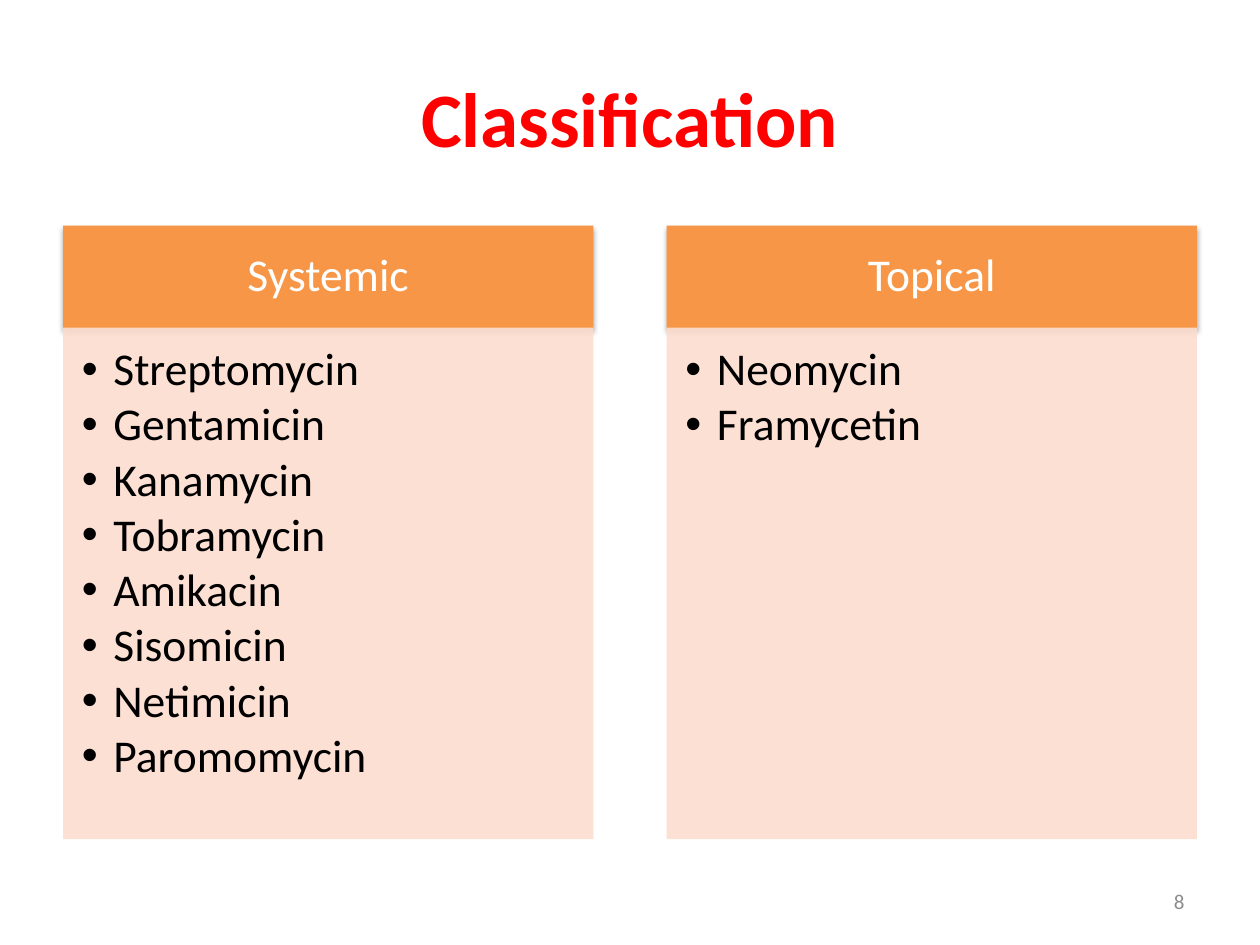
from lxml import etree
from pptx import Presentation
from pptx.dml.color import RGBColor
from pptx.enum.shapes import MSO_SHAPE
from pptx.enum.text import MSO_ANCHOR, PP_ALIGN
from pptx.oxml import parse_xml
from pptx.oxml.ns import nsdecls, qn
from pptx.util import Inches, Pt

# Content
TITLE = "Classification"
GROUPS = [
    ("Systemic", ["Streptomycin", "Gentamicin", "Kanamycin", "Tobramycin",
                  "Amikacin", "Sisomicin", "Netimicin", "Paromomycin"]),
    ("Topical", ["Neomycin", "Framycetin"]),
]
NUMBER = "8"

# Style
RED = RGBColor(0xFF, 0x00, 0x00)
ORANGE = RGBColor(0xF7, 0x96, 0x46)
PEACH = RGBColor(0xFC, 0xDD, 0xCF)
WHITE = RGBColor(0xFF, 0xFF, 0xFF)
BLACK = RGBColor(0x00, 0x00, 0x00)
GRAY = RGBColor(0x8C, 0x8C, 0x8C)
FONT = "Calibri"
RECT = MSO_SHAPE.RECTANGLE
MIDDLE, TOP = MSO_ANCHOR.MIDDLE, MSO_ANCHOR.TOP
LEFT, CENTER, RIGHT = PP_ALIGN.LEFT, PP_ALIGN.CENTER, PP_ALIGN.RIGHT

# Grid, in inches
WIDE, HIGH = 10, 7.5
EDGE, GAP = 0.5, 0.58
COL = (WIDE - 2 * EDGE - GAP * (len(GROUPS) - 1)) / len(GROUPS)
HEAD_TOP, HEAD_HIGH = 1.79, 0.82
BODY_TOP, BODY_HIGH = 2.6, 4.06

SHADOW = (f'<a:effectLst {nsdecls("a")}><a:outerShdw blurRad="40000" '
          'dist="23000" dir="5400000" rotWithShape="0"><a:srgbClr val="000000">'
          '<a:alpha val="35000"/></a:srgbClr></a:outerShdw></a:effectLst>')


def place(shape, *box):
    shape.left, shape.top, shape.width, shape.height = map(Inches, box)


def write(par, text, size, color, align, bold=False):
    par.alignment = align
    run = par.add_run()
    run.text = text
    font = run.font
    font.name, font.size, font.bold = FONT, Pt(size), bold
    font.color.rgb = color


def add_box(slide, box, fill, pads, anchor):
    shape = slide.shapes.add_shape(RECT, *map(Inches, box))
    shape.fill.solid()
    shape.fill.fore_color.rgb = fill
    shape.line.fill.background()
    shape.shadow.inherit = False
    frame = shape.text_frame
    frame.word_wrap = True
    frame.vertical_anchor = anchor
    (frame.margin_left, frame.margin_top,
     frame.margin_right, frame.margin_bottom) = map(Inches, pads)
    return shape


def add_head(slide, left, text):
    shape = add_box(slide, (left, HEAD_TOP, COL, HEAD_HIGH), ORANGE,
                    (0.2, 0.12, 0.2, 0.12), MIDDLE)
    props = shape.element.spPr
    props.replace(props.find(qn("a:effectLst")), parse_xml(SHADOW))
    par = shape.text_frame.paragraphs[0]
    par.line_spacing = 0.9
    write(par, text, 26, WHITE, CENTER)


def add_list(slide, left, items):
    shape = add_box(slide, (left, BODY_TOP, COL, BODY_HIGH), PEACH,
                    (0.15, 0.15, 0.2, 0.23), TOP)
    tint = shape.element.spPr.find(qn("a:solidFill"))[0]
    etree.SubElement(tint, qn("a:alpha"), val="90000")
    frame = shape.text_frame
    for i, item in enumerate(items):
        par = frame.add_paragraph() if i else frame.paragraphs[0]
        par.line_spacing, par.space_after = 0.9, Pt(3.5)
        write(par, item, 26, BLACK, LEFT)
        props = par._p.get_or_add_pPr()
        props.set("marL", str(Inches(0.25)))
        props.set("indent", str(-Inches(0.25)))
        etree.SubElement(props, qn("a:buFont"), typeface="Arial")
        etree.SubElement(props, qn("a:buChar"), char="•")


def main():
    deck = Presentation()
    deck.slide_width, deck.slide_height = Inches(WIDE), Inches(HIGH)
    slide = deck.slides.add_slide(deck.slide_layouts[5])

    # Title
    title = slide.shapes.title
    place(title, EDGE, 0.3, WIDE - 2 * EDGE, 1.25)
    title.text_frame.vertical_anchor = MIDDLE
    write(title.text_frame.paragraphs[0], TITLE, 44, RED, CENTER, True)

    # Columns
    for i, (name, items) in enumerate(GROUPS):
        left = EDGE + i * (COL + GAP)
        add_head(slide, left, name)
        add_list(slide, left, items)

    # Slide number
    note = slide.shapes.add_textbox(*map(Inches, (7.17, 6.95, 2.33, 0.4)))
    note.text_frame.word_wrap = True
    note.text_frame.vertical_anchor = MIDDLE
    write(note.text_frame.paragraphs[0], NUMBER, 12, GRAY, RIGHT)

    deck.save("out.pptx")


if __name__ == "__main__":
    main()
